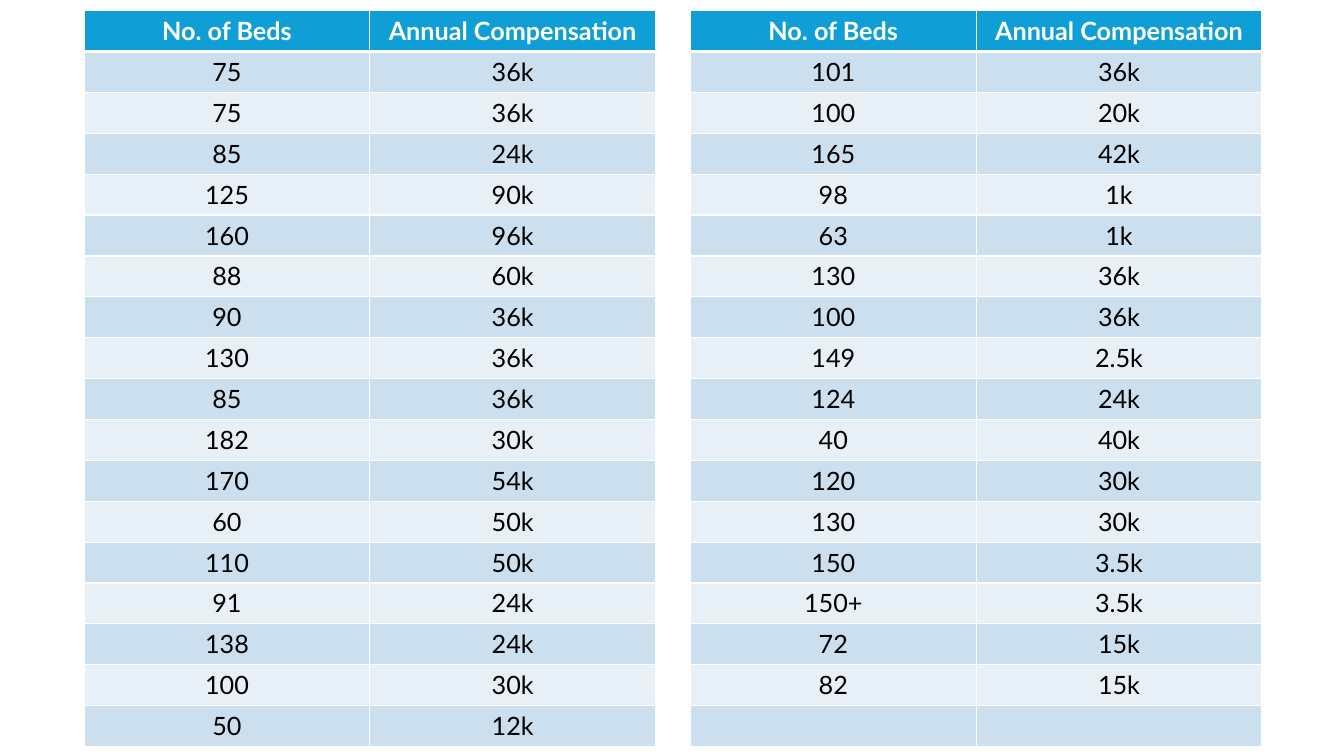
import lxml.etree
import pptx
import pptx.dml.color
import pptx.enum.text
import pptx.oxml.ns
import pptx.util

Cm = pptx.util.Cm

HEADINGS = ("No. of Beds", "Annual Compensation")
LEFT_HOMES = [
    ("75", "36k"), ("75", "36k"), ("85", "24k"), ("125", "90k"),
    ("160", "96k"), ("88", "60k"), ("90", "36k"), ("130", "36k"),
    ("85", "36k"), ("182", "30k"), ("170", "54k"), ("60", "50k"),
    ("110", "50k"), ("91", "24k"), ("138", "24k"), ("100", "30k"),
    ("50", "12k"),
]
RIGHT_HOMES = [
    ("101", "36k"), ("100", "20k"), ("165", "42k"), ("98", "1k"),
    ("63", "1k"), ("130", "36k"), ("100", "36k"), ("149", "2.5k"),
    ("124", "24k"), ("40", "40k"), ("120", "30k"), ("130", "30k"),
    ("150", "3.5k"), ("150+", "3.5k"), ("72", "15k"), ("82", "15k"),
    ("", ""),
]

THEME = {
    "font": "Lato",
    "size": 18,
    "heading_fill": "0F9ED5",
    "heading_text": "FFFFFF",
    "body_text": "000000",
    "bands": ("CCDFEF", "E7F0F7"),
    "border": "FFFFFF",
    "thin": 1,
    "thick": 3,
}

SLIDE_WIDTH, SLIDE_HEIGHT = 33.87, 19.05
TOP, MARGIN, GAP = 0.27, 2.12, 0.88
COLUMN_WIDTH, ROW_HEIGHT = 7.2, 1.03


def rgb(value):
    return pptx.dml.color.RGBColor.from_string(value)


def add_borders(cell, row):
    """Thin white rules, with a thick one between the headings and the body."""
    properties = cell._tc.get_or_add_tcPr()
    thick_side = {0: "B", 1: "T"}.get(row)
    for side in "LRTB":
        width = THEME["thick"] if side == thick_side else THEME["thin"]
        line = lxml.etree.SubElement(
            properties, pptx.oxml.ns.qn("a:ln" + side), w=str(pptx.util.Pt(width)))
        fill = lxml.etree.SubElement(line, pptx.oxml.ns.qn("a:solidFill"))
        lxml.etree.SubElement(
            fill, pptx.oxml.ns.qn("a:srgbClr"), val=THEME["border"])


def fill_cell(cell, text, row):
    is_heading = row == 0
    add_borders(cell, row)
    cell.fill.solid()
    cell.fill.fore_color.rgb = rgb(
        THEME["heading_fill"] if is_heading else THEME["bands"][(row - 1) % 2])
    paragraph = cell.text_frame.paragraphs[0]
    paragraph.alignment = pptx.enum.text.PP_ALIGN.CENTER
    if not text:
        return
    paragraph.text = text
    font = paragraph.runs[0].font
    font.name = THEME["font"]
    font.size = pptx.util.Pt(THEME["size"])
    font.bold = is_heading
    font.color.rgb = rgb(THEME["heading_text" if is_heading else "body_text"])


def add_homes(slide, homes, left):
    rows = [HEADINGS, *homes]
    width = COLUMN_WIDTH * len(HEADINGS)
    table = slide.shapes.add_table(
        len(rows), len(HEADINGS), Cm(left), Cm(TOP),
        Cm(width), Cm(ROW_HEIGHT * len(rows))).table
    for column in table.columns:
        column.width = Cm(COLUMN_WIDTH)
    for r, texts in enumerate(rows):
        table.rows[r].height = Cm(ROW_HEIGHT)
        for c, text in enumerate(texts):
            fill_cell(table.cell(r, c), text, r)


def main():
    presentation = pptx.Presentation()
    presentation.slide_width = Cm(SLIDE_WIDTH)
    presentation.slide_height = Cm(SLIDE_HEIGHT)
    slide = presentation.slides.add_slide(presentation.slide_layouts[6])
    step = COLUMN_WIDTH * len(HEADINGS) + GAP
    for i, homes in enumerate((LEFT_HOMES, RIGHT_HOMES)):
        add_homes(slide, homes, MARGIN + i * step)
    presentation.save("out.pptx")


if __name__ == "__main__":
    main()
